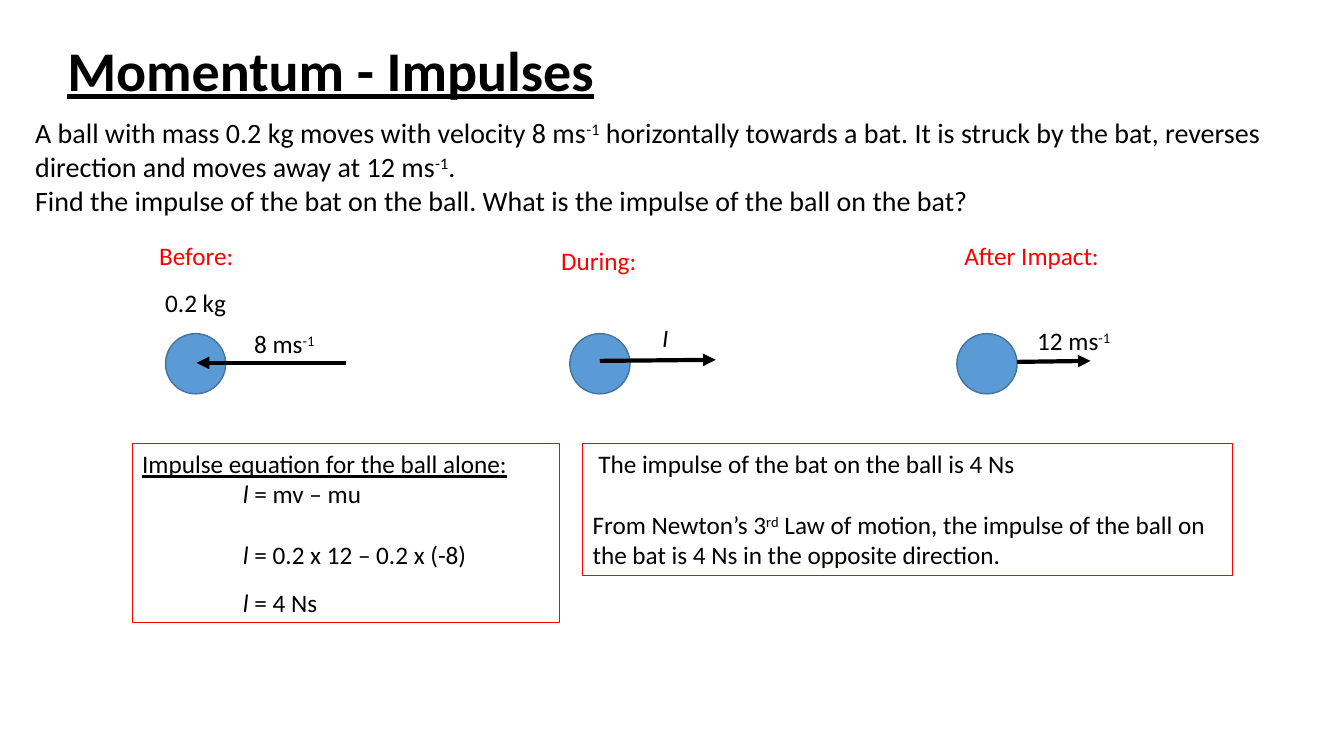
"""Build the slide on the impulse between a bat and a ball."""
from pptx import Presentation
from pptx.dml.color import RGBColor
from pptx.enum.shapes import MSO_CONNECTOR as Link, MSO_SHAPE as Form
from pptx.enum.text import MSO_ANCHOR as Anchor, PP_ALIGN as Align
from pptx.oxml.ns import qn
from pptx.util import Pt
from lxml.etree import SubElement as Sub

hue = RGBColor.from_string
BLACK, RED, BLUE, NAVY = "000000", "FF0000", "5B9BD5", "43739E"


def write(shape, paras, size=18, tint=BLACK):
    """Fill a shape with paragraphs of (space before, indent, runs)."""
    frame = shape.text_frame
    frame.word_wrap = True
    frame.vertical_anchor = Anchor.TOP
    for i, (gap, dent, runs) in enumerate(paras):
        para = frame.add_paragraph() if i else frame.paragraphs[0]
        para.alignment = Align.LEFT
        para.space_before = Pt(gap)
        para._p.get_or_add_pPr().set("marL", str(Pt(dent)))
        for text, style in runs:
            run = para.add_run()
            run.text = text
            font = run.font
            font.name, font.size = "Calibri", Pt(size)
            font.color.rgb = hue(tint)
            font.bold = "b" in style
            font.italic = "i" in style
            font.underline = "u" in style
            if "^" in style:
                run._r.get_or_add_rPr().set("baseline", "30000")


deck = Presentation()
deck.slide_width, deck.slide_height = Pt(960), Pt(540)
slide = deck.slides.add_slide(deck.slide_layouts[6])
shapes = slide.shapes

title = shapes.add_textbox(Pt(41), Pt(21.6), Pt(396), Pt(55.5))
write(title, [(0, 0, [("Momentum - Impulses", "bu")])], 40)

task = shapes.add_textbox(Pt(18), Pt(79.2), Pt(907), Pt(80))
write(task, [
    (0, 0, [("A ball with mass 0.2 kg moves with velocity 8 ms", ""), ("-1", "^"),
            (" horizontally towards a bat. It is struck by the bat, reverses "
             "direction and moves away at 12 ms", ""), ("-1", "^"), (".", "")]),
    (0, 0, [("Find the impulse of the bat on the ball. "
             "What is the impulse of the ball on the bat?", "")]),
], 20)

for left in (118.2, 407, 683.5):
    ball = shapes.add_shape(Form.OVAL, Pt(left), Pt(238.3), Pt(43), Pt(43))
    ball.shadow.inherit = False
    ball.fill.solid()
    ball.fill.fore_color.rgb = hue(BLUE)
    ball.line.color.rgb = hue(NAVY)
    ball.line.width = Pt(1)

for x1, y1, x2, y2 in ((247, 259.2, 140.5, 259.2), (428.4, 257.8, 511.2, 257),
                       (726.5, 258.5, 779, 257.8)):
    arrow = shapes.add_connector(Link.STRAIGHT, Pt(x1), Pt(y1), Pt(x2), Pt(y2))
    arrow.line.color.rgb = hue(BLACK)
    arrow.line.width = Pt(3)
    Sub(arrow.line._get_or_add_ln(), qn("a:tailEnd"), type="triangle")
    Sub(arrow._element.spPr, qn("a:effectLst"))

labels = [
    (106.6, 167.8, 70, RED, [("Before:", "")]),
    (393.8, 172, 71, RED, [("During:", "")]),
    (681.8, 167.8, 116, RED, [("After Impact:", "")]),
    (110.9, 201.6, 60, BLACK, [("0.2 kg", "")]),
    (174.5, 231.3, 61, BLACK, [("8 ms", ""), ("-1", "^")]),
    (465.9, 227, 21, BLACK, [("I", "i")]),
    (733.8, 229, 70, BLACK, [("12 ms", ""), ("-1", "^")]),
]
for left, top, wide, tint, runs in labels:
    label = shapes.add_textbox(Pt(left), Pt(top), Pt(wide), Pt(29))
    write(label, [(0, 0, runs)], tint=tint)

proof = [
    (0, 0, [("Impulse equation for the ball alone:", "u")]),
    (0, 72, [("l", "i"), (" = mv – mu", "")]),
    (22, 72, [("l ", "i"), ("= 0.2 x 12 – 0.2 x (-8)", "")]),
    (12.2, 72, [("l ", "i"), ("= 4 Ns", "")]),
]
answer = [
    (0, 0, [(" The impulse of the bat on the ball is 4 Ns", "")]),
    (22, 0, [("From Newton’s 3", ""), ("rd", "^"),
             (" Law of motion, the impulse of the ball on the bat is 4 Ns "
              "in the opposite direction.", "")]),
]
for left, wide, high, paras in ((94.5, 305.3, 128.2, proof),
                                (416.2, 464.4, 94.3, answer)):
    box = shapes.add_shape(Form.RECTANGLE, Pt(left), Pt(316.8), Pt(wide), Pt(high))
    box.shadow.inherit = False
    box.fill.background()
    box.line.color.rgb = hue(RED)
    box.line.width = Pt(0.75)
    write(box, paras)

deck.save("out.pptx")
